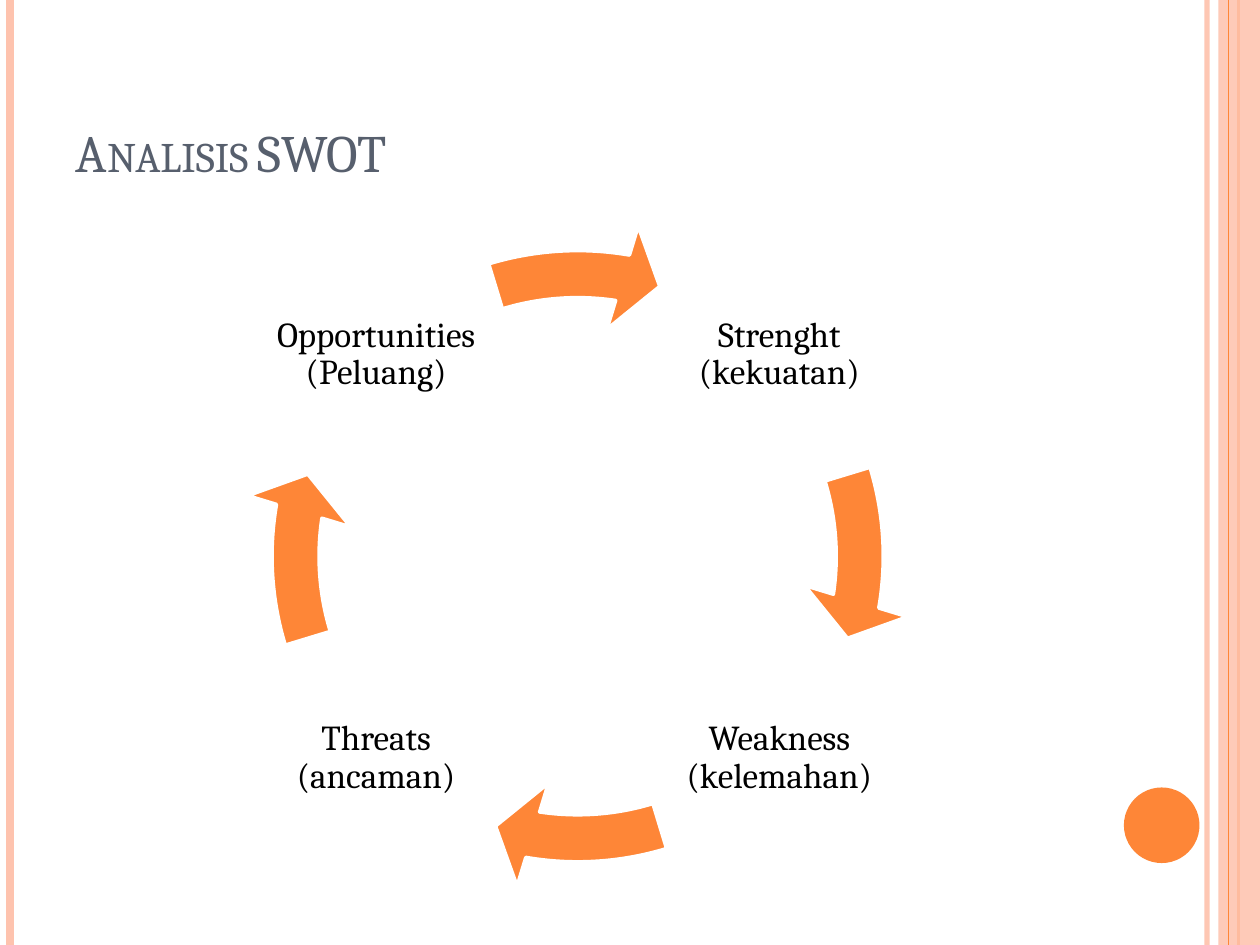
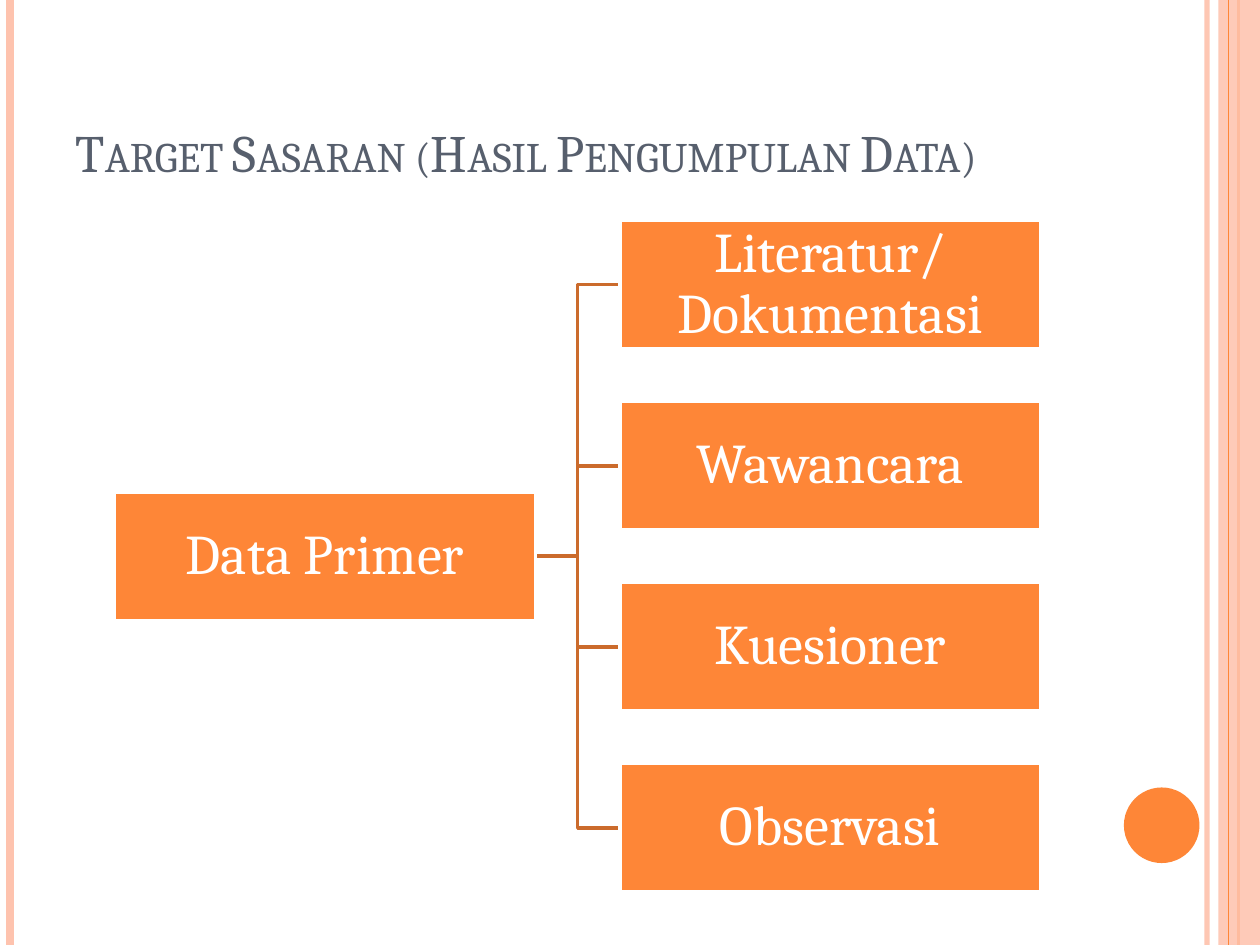
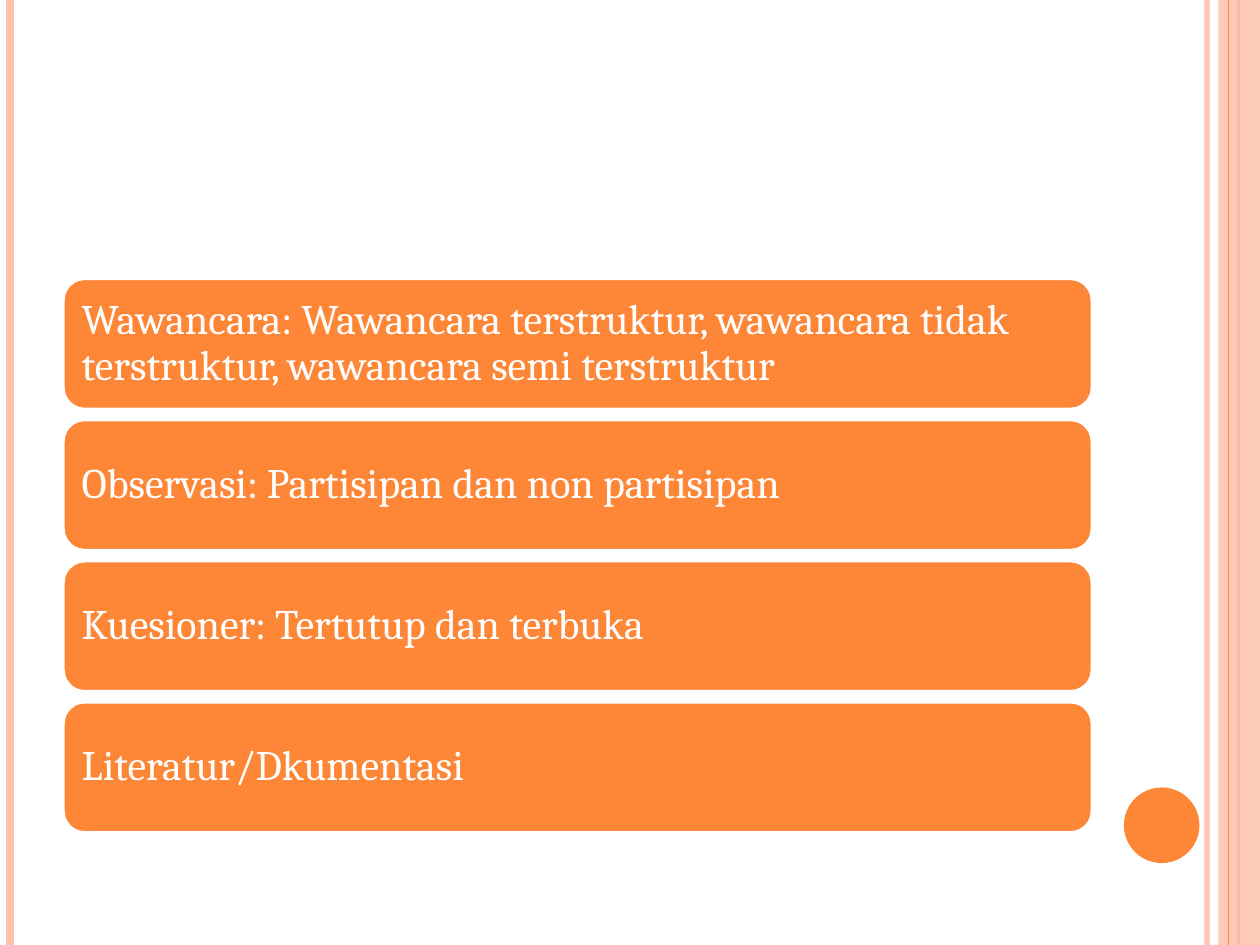
from dataclasses import dataclass

from lxml.etree import SubElement
from pptx import Presentation
from pptx.dml.color import RGBColor
from pptx.enum.shapes import MSO_CONNECTOR, MSO_SHAPE
from pptx.enum.text import MSO_ANCHOR, MSO_AUTO_SIZE, PP_ALIGN
from pptx.oxml.ns import qn
from pptx.util import Inches, Pt

TITLE_ONLY, BLANK = 5, 6


@dataclass(frozen=True)
class Theme:
    font: str = "Cambria"
    accent: str = "FE8637"
    pale: str = "FEC3AE"
    branch: str = "CB6B2C"
    heading: str = "575F6D"
    ink: str = "000000"
    white: str = "FFFFFF"
    title_size: int = 30
    cycle_size: int = 20
    tree_size: int = 32
    list_size: int = 24
    outline: int = 2


class Deck:
    def __init__(self, theme):
        self.theme = theme
        self.prs = Presentation()
        self.prs.slide_width, self.prs.slide_height = Inches(10), Inches(7.5)
        self.slide = None

    def add_slide(self, title=None):
        layout = self.prs.slide_layouts[TITLE_ONLY if title else BLANK]
        self.slide = self.prs.slides.add_slide(layout)
        if title:
            self.title(title)

    def title(self, text):
        heading = self.slide.shapes.title
        heading.left, heading.top = Inches(0.5), Inches(0.3)
        heading.width, heading.height = Inches(8.17), Inches(1.25)
        self.add_text(heading, text, self.theme.title_size, self.theme.heading,
                      PP_ALIGN.LEFT, MSO_ANCHOR.BOTTOM, spacing=1.0)
        heading.element.xpath(".//a:rPr")[0].set("cap", "small")

    def add_text(self, holder, text, size, color, align=PP_ALIGN.CENTER,
                 anchor=MSO_ANCHOR.MIDDLE, margin=0.1, spacing=0.9):
        frame = holder.text_frame
        frame.word_wrap = True
        frame.auto_size = MSO_AUTO_SIZE.NONE
        frame.vertical_anchor = anchor
        frame.margin_left = frame.margin_right = Inches(margin)
        frame.margin_top = frame.margin_bottom = Inches(margin)
        paragraph = frame.paragraphs[0]
        paragraph.alignment = align
        paragraph.line_spacing = spacing
        run = paragraph.add_run()
        run.text = text
        run.font.name = self.theme.font
        run.font.size = Pt(size)
        run.font.color.rgb = RGBColor.from_string(color)

    def stroke(self, line, color, width):
        line.color.rgb = RGBColor.from_string(color)
        line.width = Pt(width)

    def shape(self, kind, left, top, width, height, fill=None, outlined=True):
        shape = self.slide.shapes.add_shape(
            kind, Inches(left), Inches(top), Inches(width), Inches(height))
        shape.shadow.inherit = False
        shape.fill.solid()
        shape.fill.fore_color.rgb = RGBColor.from_string(fill or self.theme.accent)
        if outlined:
            self.stroke(shape.line, self.theme.white, self.theme.outline)
        else:
            shape.line.fill.background()
        return shape

    def label(self, text, left, top, width, height):
        box = self.slide.shapes.add_textbox(
            Inches(left), Inches(top), Inches(width), Inches(height))
        self.add_text(box, text, self.theme.cycle_size, self.theme.ink, margin=0.03)

    def vertical_rule(self, x, color, width):
        rule = self.slide.shapes.add_connector(
            MSO_CONNECTOR.STRAIGHT, Inches(x), 0, Inches(x), self.prs.slide_height)
        self.stroke(rule.line, color, width)
        SubElement(rule.element.spPr, qn("a:effectLst"))
        return rule

    def polyline(self, points):
        start, *rest = [(Inches(x), Inches(y)) for x, y in points]
        builder = self.slide.shapes.build_freeform(*start)
        builder.add_line_segments(rest, close=False)
        outline = builder.convert_to_shape()
        outline.shadow.inherit = False
        outline.fill.background()
        self.stroke(outline.line, self.theme.branch, self.theme.outline)

    def fade(self, shape, percent):
        """Set the opacity of every colour in the shape's own formatting."""
        for color in shape.element.xpath("./p:spPr//a:srgbClr"):
            SubElement(color, qn("a:alpha")).set("val", str(percent * 1000))

    def frame_master(self):
        """Draw the side bands on the current slide, then move them to the master."""
        theme = self.theme
        inner_rule = self.vertical_rule(9.58, theme.pale, 3)
        left_rule = self.vertical_rule(0.08, theme.pale, 4.5)
        covered_rule = self.vertical_rule(9.83, theme.accent, 1.5)
        band = self.shape(MSO_SHAPE.RECTANGLE, 9.67, 0, 0.33, 7.5, theme.pale, False)
        band_rule = self.vertical_rule(9.75, theme.accent, 0.75)
        disc = self.shape(MSO_SHAPE.OVAL, 8.92, 6.25, 0.6, 0.6, outlined=False)
        self.fade(inner_rule, 93)
        self.fade(band, 87)
        parts = [inner_rule, left_rule, covered_rule, band, band_rule, disc]
        for number, part in enumerate(parts, start=101):
            part.element.xpath(".//p:cNvPr")[0].set("id", str(number))
            self.prs.slide_master.shapes.element.append(part.element)


def swot_cycle(deck):
    left, right, upper, lower = 2.04, 5.24, 1.87, 5.07
    stages = [
        ("Strenght (kekuatan)", right, upper),
        ("Weakness (kelemahan)", right, lower),
        ("Threats (ancaman)", left, lower),
        ("Opportunities (Peluang)", left, upper),
    ]
    # Adjustments hold angles in units where a full turn is 216.
    full_turn, first_end, first_start = 216, 5.5, 205.85
    for index, (stage, x, y) in enumerate(stages):
        deck.label(stage, x, y, 1.89, 1.89)
        arrow = deck.shape(MSO_SHAPE.CIRCULAR_ARROW, 1.92, 1.75, 5.33, 5.33)
        turn = index * full_turn / len(stages)
        settings = (0.07, 4.65, first_end + turn,
                    (first_start + turn) % full_turn, 0.08)
        for position, value in enumerate(settings):
            arrow.adjustments[position] = value


def data_tree(deck):
    sources = ["Literatur/ Dokumentasi", "Wawancara", "Kuesioner", "Observasi"]
    top, bottom, width, height = 1.75, 7.08, 3.34, 1.02
    root_left, source_left = 0.91, 4.92
    middle = (top + bottom) / 2
    root_right = root_left + width
    bend = (root_right + source_left) / 2
    pitch = (bottom - top - height) / (len(sources) - 1)
    source_tops = [top + index * pitch for index in range(len(sources))]

    for source_top in source_tops:
        y = source_top + height / 2
        deck.polyline([(root_right, middle), (bend, middle), (bend, y), (source_left, y)])

    nodes = [("Data Primer", root_left, middle - height / 2)]
    nodes += [(source, source_left, y) for source, y in zip(sources, source_tops)]
    for text, x, y in nodes:
        node = deck.shape(MSO_SHAPE.RECTANGLE, x, y, width, height)
        deck.add_text(node, text, deck.theme.tree_size, deck.theme.white, margin=0.02)


def method_list(deck):
    methods = [
        "Wawancara: Wawancara terstruktur, wawancara tidak terstruktur, "
        "wawancara semi terstruktur",
        "Observasi: Partisipan dan non partisipan",
        "Kuesioner: Tertutup dan terbuka",
        "Literatur/Dkumentasi",
    ]
    for index, method in enumerate(methods):
        bar = deck.shape(MSO_SHAPE.ROUNDED_RECTANGLE, 0.5, 2.21 + index * 1.12, 8.17, 1.04)
        deck.add_text(bar, method, deck.theme.list_size, deck.theme.white, PP_ALIGN.LEFT)


def main():
    deck = Deck(Theme())
    deck.add_slide("Analisis SWOT")
    deck.frame_master()
    swot_cycle(deck)
    deck.add_slide("Target Sasaran (Hasil Pengumpulan Data)")
    data_tree(deck)
    deck.add_slide()
    method_list(deck)
    deck.prs.save("out.pptx")


if __name__ == "__main__":
    main()
